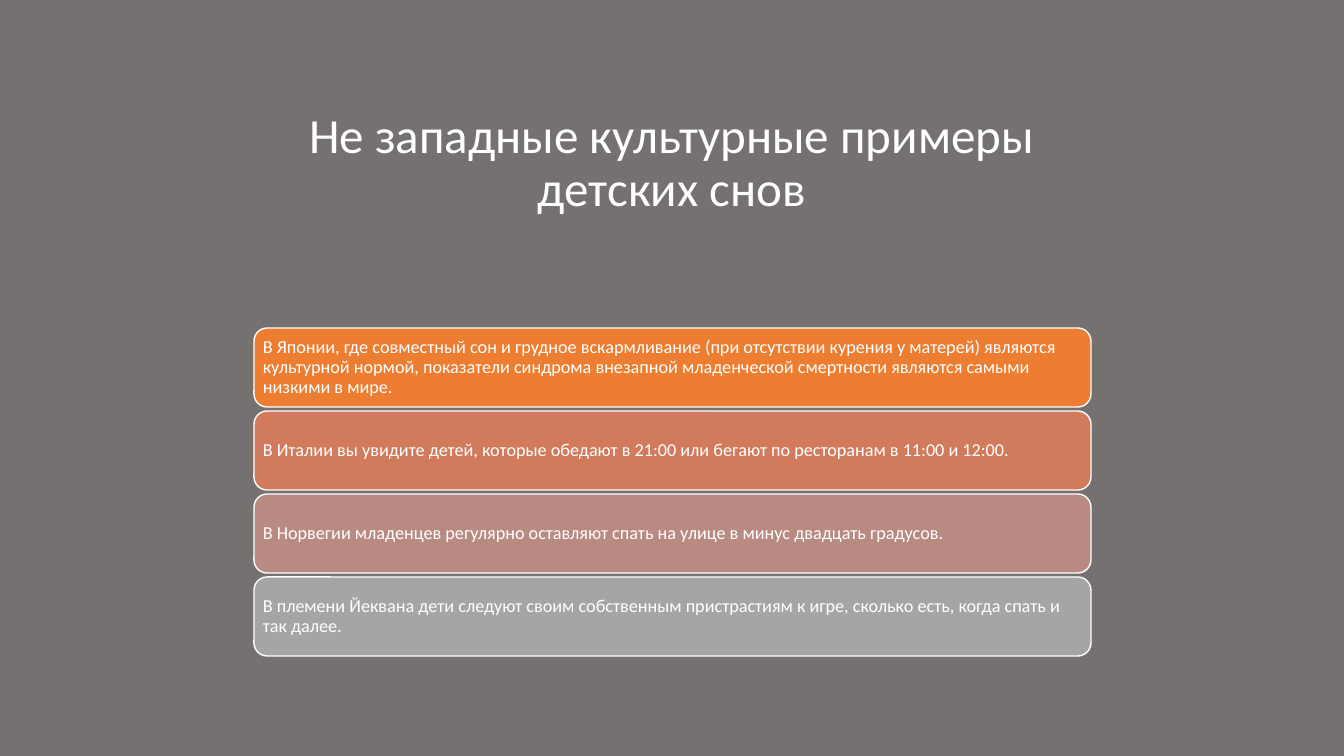
import pptx
import pptx.dml.color
import pptx.enum.shapes
import pptx.enum.text
import pptx.util

ALIGN = pptx.enum.text.PP_ALIGN
COLORS = {
    "background": "767171",
    "white": "FFFFFF",
    "japan": "ED7D31",
    "italy": "D17B5C",
    "norway": "B98A82",
    "yequana": "A5A5A5",
}
EXAMPLES = {
    "japan": "В Японии, где совместный сон и грудное вскармливание (при отсутствии курения у матерей) "
             "являются культурной нормой, показатели синдрома внезапной младенческой смертности "
             "являются самыми низкими в мире.",
    "italy": "В Италии вы увидите детей, которые обедают в 21:00 или бегают по ресторанам в 11:00 и 12:00.",
    "norway": "В Норвегии младенцев регулярно оставляют спать на улице в минус двадцать градусов.",
    "yequana": "В племени Йеквана дети следуют своим собственным пристрастиям к игре, сколько есть, "
               "когда спать и так далее.",
}
CARD_TOP, CARD_HEIGHT, CARD_PITCH = 328, 79, 83


def px(length):
    """Convert whole pixels to EMU."""
    return pptx.util.Emu(round(length * 914400 / 100.8))


def rgb(name):
    """Look up a named colour."""
    return pptx.dml.color.RGBColor.from_string(COLORS[name])


def write(frame, text, size, color="white", align=ALIGN.CENTER, spacing=0.9, inset=(10, 5)):
    """Fill a text frame with one formatted paragraph."""
    frame.word_wrap = True
    frame.auto_size = pptx.enum.text.MSO_AUTO_SIZE.NONE
    frame.vertical_anchor = pptx.enum.text.MSO_ANCHOR.MIDDLE
    frame.margin_left = frame.margin_right = px(inset[0])
    frame.margin_top = frame.margin_bottom = px(inset[1])
    paragraph = frame.paragraphs[0]
    paragraph.alignment = align
    paragraph.line_spacing = spacing
    run = paragraph.add_run()
    run.text = text
    run.font.name = "Calibri"
    run.font.size = pptx.util.Pt(size)
    run.font.color.rgb = rgb(color)


class DreamSlide:
    """Style and drawing methods for the current slide."""

    def __init__(self, presentation):
        """Add a title-only slide with a plain background."""
        self.slide = presentation.slides.add_slide(presentation.slide_layouts[5])
        fill = self.slide.background.fill
        fill.solid()
        fill.fore_color.rgb = rgb("background")

    def title(self, text, left, top, width, height):
        """Place and format the title."""
        heading = self.slide.shapes.title
        heading.left, heading.top = px(left), px(top)
        heading.width, heading.height = px(width), px(height)
        write(heading.text_frame, text, 35)

    def card(self, text, color, left, top, width, height):
        """Draw a rounded card with its example."""
        card = self.slide.shapes.add_shape(
            pptx.enum.shapes.MSO_SHAPE.ROUNDED_RECTANGLE, px(left), px(top), px(width), px(height))
        card.shadow.inherit = False
        card.fill.solid()
        card.fill.fore_color.rgb = rgb(color)
        card.line.color.rgb = rgb("white")
        card.line.width = pptx.util.Pt(1)
        write(card.text_frame, text, 13, align=ALIGN.LEFT, inset=(5, 5))


def main():
    """Build and save the slide."""
    presentation = pptx.Presentation()
    presentation.slide_width, presentation.slide_height = px(1344), px(756)
    dreams = DreamSlide(presentation)
    dreams.title("Не западные культурные примеры детских снов", 265, 91, 814, 146)
    for index, (place, example) in enumerate(EXAMPLES.items()):
        dreams.card(example, place, 254, CARD_TOP + index * CARD_PITCH, 837, CARD_HEIGHT)
    presentation.save("out.pptx")


if __name__ == "__main__":
    main()
